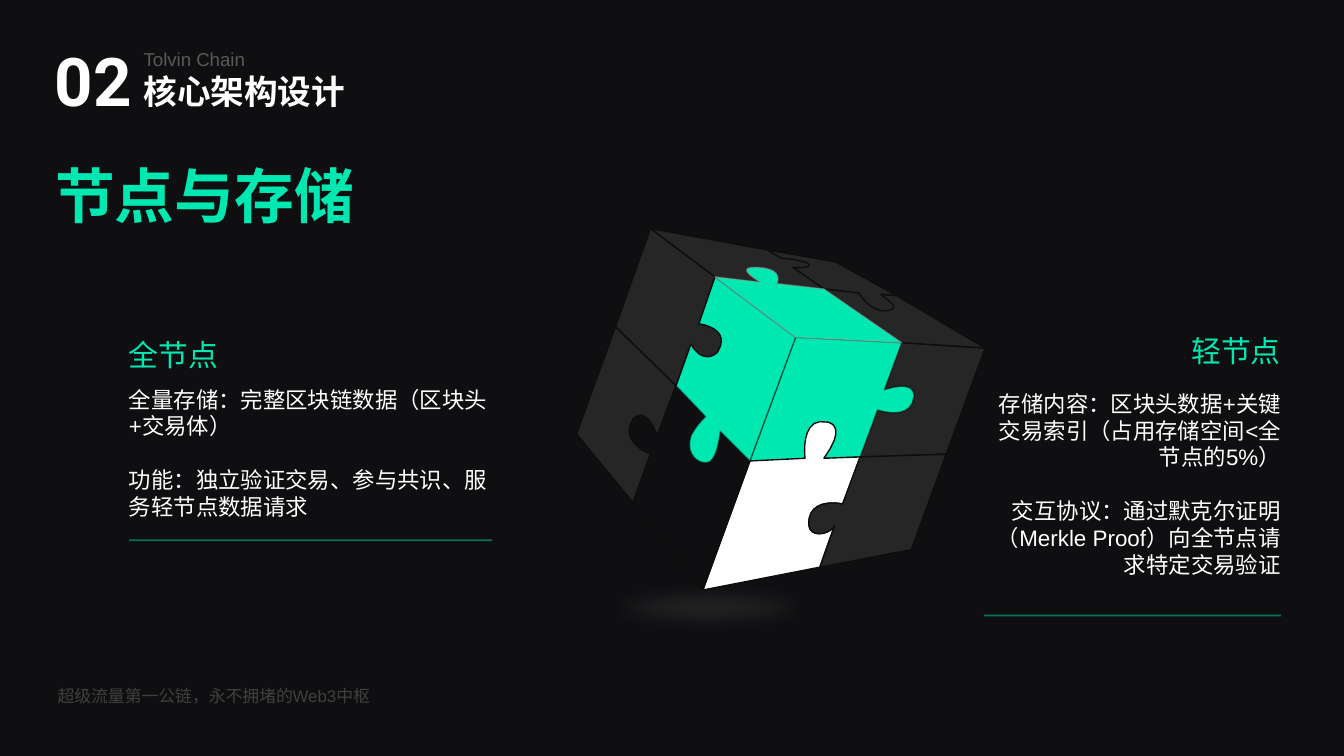
"""Build the node and storage slide with its puzzle cube."""
from math import cos, radians, sin

from lxml import etree
from pptx import Presentation
from pptx.dml.color import RGBColor
from pptx.enum.shapes import MSO_CONNECTOR, MSO_SHAPE
from pptx.enum.text import MSO_ANCHOR, MSO_AUTO_SIZE, PP_ALIGN
from pptx.oxml.ns import qn
from pptx.util import Inches, Pt

OVAL, STRAIGHT = MSO_SHAPE.OVAL, MSO_CONNECTOR.STRAIGHT
LEFT, RIGHT = PP_ALIGN.LEFT, PP_ALIGN.RIGHT
TOP, BOTTOM = MSO_ANCHOR.TOP, MSO_ANCHOR.BOTTOM
FIT, FIXED = MSO_AUTO_SIZE.SHAPE_TO_FIT_TEXT, MSO_AUTO_SIZE.NONE
NIGHT = RGBColor(0x0F, 0x0F, 0x11)
CHARCOAL = RGBColor(0x26, 0x26, 0x26)
SEAM_BLACK = RGBColor(0x0D, 0x0D, 0x0D)
SEAM_GREY = RGBColor(0x99, 0x99, 0x99)
SHADOW_GREY = RGBColor(0x80, 0x80, 0x80)
FOOTER_GREY = RGBColor(0x40, 0x40, 0x40)
LABEL_GREY = RGBColor(0x59, 0x59, 0x59)
GREEN = RGBColor(0x00, 0xE8, 0xB1)
WHITE = RGBColor(0xFF, 0xFF, 0xFF)
TILT = 5
CURVE_STEPS = 10


def fade(element, percent):
    for color in element.iter(qn("a:srgbClr")):
        etree.SubElement(color, qn("a:alpha"), val=str(percent * 1000))


def seam(start, *curves):
    points = [start]
    for curve in curves:
        bezier = (points[-1], *curve)
        for step in range(1, CURVE_STEPS + 1):
            t = step / CURVE_STEPS
            weights = ((1 - t) ** 3, 3 * t * (1 - t) ** 2, 3 * t * t * (1 - t), t ** 3)
            points.append(tuple(sum(w * p[axis] for w, p in zip(weights, bezier))
                                for axis in (0, 1)))
    return points


deck = Presentation()
deck.slide_width, deck.slide_height = Inches(10), Inches(10 * 9 / 16)
slide = deck.slides.add_slide(deck.slide_layouts[5])
slide.background.fill.solid()
slide.background.fill.fore_color.rgb = NIGHT

heading = dict(size=Pt(16), color=GREEN, inset=0, anchor=BOTTOM, auto_size=FIXED)
body = dict(size=Pt(12), color=WHITE, inset=0, auto_size=FIXED)
texts = [
    ("超级流量第一公链，永不拥堵的Web3中枢", (0.33, 5.05, 9.3, 0.25),
     dict(size=Pt(9), color=FOOTER_GREY)),
    ("02", (0.31, 0.24, 0.8, 0.71),
     dict(size=Pt(36), color=WHITE, name="Roboto", bold=True)),
    ("核心架构设计", (0.97, 0.48, 6.36, 0.4), dict(size=Pt(18), color=WHITE, bold=True)),
    ("Tolvin Chain", (0.97, 0.31, 3.92, 0.27), dict(size=Pt(10), color=LABEL_GREY)),
    ("节点与存储", (0.31, 1.13, 3.91, 0.64),
     dict(size=Pt(32), color=GREEN, bold=True, is_title=True)),
    ("全节点", (0.96, 2.42, 1.37, 0.35), heading),
    ("全量存储：完整区块链数据（区块头+交易体）\n"
     "功能：独立验证交易、参与共识、服务轻节点数据请求", (0.96, 2.87, 2.77, 0.84), body),
    ("轻节点", (8.16, 2.39, 1.37, 0.35), heading | dict(align=RIGHT)),
    ("存储内容：区块头数据+关键交易索引（占用存储空间<全节点的5%）\n"
     "交互协议：通过默克尔证明（Merkle Proof）向全节点请求特定交易验证",
     (7.4, 2.9, 2.13, 1.45), body | dict(align=RIGHT)),
]
for wording, place, style in texts:
    box = [Inches(length) for length in place]
    if style.get("is_title"):
        holder = slide.shapes.title
        holder.left, holder.top, holder.width, holder.height = box
    else:
        holder = slide.shapes.add_textbox(*box)
    frame = holder.text_frame
    frame.text = wording
    frame.word_wrap = True
    frame.auto_size = style.get("auto_size", FIT)
    frame.vertical_anchor = style.get("anchor", TOP)
    if "inset" in style:
        for side in ("left", "right", "top", "bottom"):
            setattr(frame, f"margin_{side}", style["inset"])
    for number, paragraph in enumerate(frame.paragraphs):
        paragraph.alignment = style.get("align", LEFT)
        paragraph.space_before = Pt(14.4 if number else 0)
        font = paragraph.runs[0].font
        font.color.rgb = style["color"]
        font_format = dict(name="Arial", bold=False) | style
        for attribute in ("name", "size", "bold"):
            setattr(font, attribute, font_format[attribute])

ground = slide.shapes.add_shape(OVAL, Inches(4.25), Inches(4.3), Inches(2.05), Inches(0.44))
ground.shadow.inherit = False
ground.fill.solid()
ground.fill.fore_color.rgb = SHADOW_GREY
ground.line.fill.background()
ground_format = ground._element.spPr
fade(ground_format, 20)
etree.SubElement(ground_format.find(qn("a:effectLst")), qn("a:softEdge"),
                 rad=str(Inches(0.14)))

back_left, back_mid, back_right = (4.84, 1.7), (5.71, 1.86), (6.22, 1.95)
top_left, top_center, top_right = (5.32, 2.06), (6.13, 2.15), (6.67, 2.2)
near, near_right, far_right = (5.92, 2.51), (6.71, 2.55), (7.33, 2.59)
left_edge, left_center, front_edge = (4.58, 2.43), (5.03, 2.87), (5.58, 3.43)
right_center, right_edge = (6.4, 3.4), (7.04, 3.38)
base_left, base_left_mid, base_front = (4.29, 3.23), (4.71, 3.74), (5.23, 4.39)
base_right_mid, base_right = (6.1, 4.22), (6.78, 4.09)

right_upper = seam((6.53, 3.05), ((6.53, 3.05), (6.78, 3.14), (6.8, 2.95)),
                   ((6.8, 2.95), (6.82, 2.82), (6.58, 2.9)))
right_lower = seam((6.27, 3.75), ((6.27, 3.75), (6.05, 3.7), (6.02, 3.86)),
                   ((5.99, 4.02), (6.18, 3.98), (6.21, 3.91)))
front_middle = seam((5.99, 3.41), ((5.99, 3.41), (5.95, 3.1), (6.15, 3.14)),
                    ((6.15, 3.14), (6.32, 3.15), (6.13, 3.41)))
left_lower = seam((4.84, 3.38), ((4.84, 3.38), (4.6, 3.29), (4.71, 3.12)),
                  ((4.71, 3.12), (4.8, 3), (4.89, 3.24)))
left_middle = seam((5.36, 3.21), ((5.36, 3.21), (5.34, 3.42), (5.27, 3.44)),
                   ((5.2, 3.46), (5.1, 3.38), (5.14, 3.25)),
                   ((5.14, 3.25), (5.16, 3.19), (5.25, 3.1)))
left_upper = seam((5.2, 2.41), ((5.2, 2.41), (5.45, 2.44), (5.34, 2.62)),
                  ((5.34, 2.62), (5.24, 2.73), (5.14, 2.56)))
top_side = seam((6.55, 2.19), ((6.55, 2.19), (6.67, 2.27), (6.65, 2.29)),
                ((6.62, 2.32), (6.5, 2.35), (6.39, 2.18)))
top_back = seam((5.9, 1.99), ((5.9, 1.99), (6.03, 2), (6.02, 1.97)),
                ((6.02, 1.94), (5.81, 1.92), (5.81, 1.92)))
top_front = seam((5.66, 2.1), ((5.66, 2.1), (5.44, 1.98), (5.64, 1.99)),
                 ((5.84, 2), (5.78, 2.11), (5.78, 2.11)))

pieces = [
    ([near_right, far_right, right_edge, right_center, *right_upper], CHARCOAL, SEAM_BLACK),
    ([near, front_edge, right_center, *right_upper, near_right], GREEN, SEAM_BLACK),
    ([base_right_mid, base_front, front_edge, *front_middle, right_center, *right_lower],
     WHITE, SEAM_BLACK),
    ([right_edge, right_center, *right_lower, base_right_mid, base_right],
     CHARCOAL, SEAM_BLACK),
    ([left_edge, base_left, base_left_mid, left_center], CHARCOAL, SEAM_BLACK),
    ([base_front, base_left_mid, *left_lower, left_center, front_edge], NIGHT, SEAM_BLACK),
    ([near, front_edge, *left_middle, left_center, top_left], GREEN, SEAM_BLACK),
    ([back_left, top_left, *left_upper, left_center, left_edge], CHARCOAL, SEAM_BLACK),
    ([far_right, near_right, top_center, top_right], CHARCOAL, SEAM_BLACK),
    ([back_mid, back_right, top_right, *top_side, top_center], CHARCOAL, SEAM_BLACK),
    ([back_left, top_left, top_center, *top_back, back_mid], CHARCOAL, SEAM_BLACK),
    ([top_center, near_right, near, top_left, *top_front], GREEN, SEAM_GREY),
]
cosine, sine = cos(radians(TILT)), sin(radians(TILT))
for outline, fill_color, line_color in pieces:
    upright = [(Inches(x * cosine + y * sine), Inches(y * cosine - x * sine))
               for x, y in outline]
    builder = slide.shapes.build_freeform(*upright[0])
    builder.add_line_segments(upright[1:], close=True)
    piece = builder.convert_to_shape()
    center_x, center_y = piece.left + piece.width / 2, piece.top + piece.height / 2
    piece.left = round(center_x * cosine - center_y * sine - piece.width / 2)
    piece.top = round(center_x * sine + center_y * cosine - piece.height / 2)
    piece.rotation = TILT
    piece.shadow.inherit = False
    piece.fill.solid()
    piece.fill.fore_color.rgb = fill_color
    piece.line.color.rgb = line_color
    piece.line.width = Pt(0.75)
    if fill_color == GREEN:
        fade(piece._element.spPr.find(qn("a:ln")), 50)

for start, end, height in ((3.66, 0.96, 4.02), (9.53, 7.32, 4.58)):
    rule = slide.shapes.add_connector(STRAIGHT, Inches(start), Inches(height),
                                      Inches(end), Inches(height))
    rule.line.color.rgb = GREEN
    rule.line.width = Pt(1)
    fade(rule._element.spPr, 46)
    etree.SubElement(rule._element.spPr, qn("a:effectLst"))

deck.save("out.pptx")
